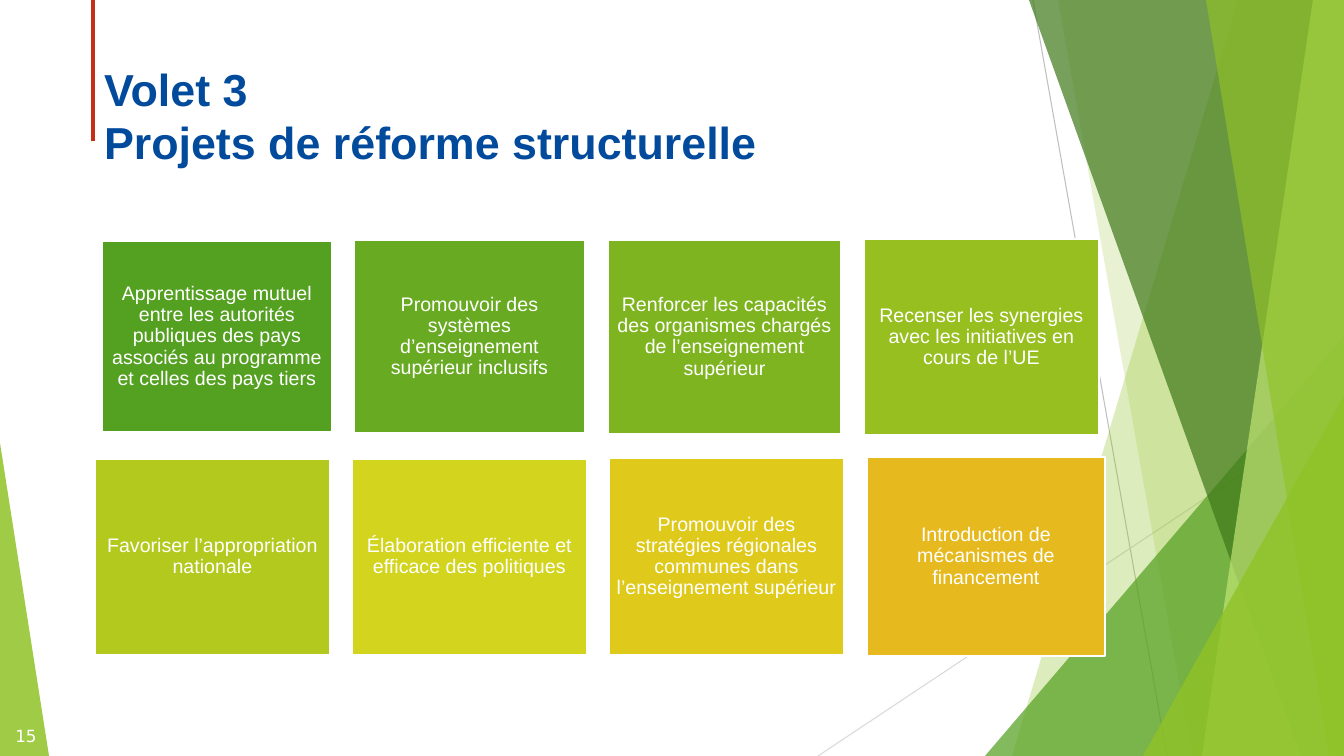
"""Build the slide on structural reform projects."""
from lxml.etree import SubElement
from pptx import Presentation
from pptx.dml.color import RGBColor
from pptx.enum.shapes import MSO_CONNECTOR, MSO_SHAPE
from pptx.enum.text import MSO_ANCHOR, MSO_AUTO_SIZE, PP_ALIGN
from pptx.oxml.ns import qn
from pptx.util import Pt

TITLE = ["Volet 3", "Projets de réforme structurelle"]
NUMBER = "15"
CARDS = [
    ("Apprentissage mutuel entre les autorités publiques des pays associés au programme "
     "et celles des pays tiers", "54A021", (102, 241, 230, 191)),
    ("Promouvoir des systèmes d’enseignement supérieur inclusifs", "68AA21", (354, 240, 231, 193)),
    ("Renforcer les capacités des organismes chargés de l’enseignement supérieur",
     "7EB420", (608, 240, 233, 194)),
    ("Recenser les synergies avec les initiatives en cours de l’UE", "97BF1F", (864, 239, 235, 196)),
    ("Favoriser l’appropriation nationale", "B3C91E", (95, 459, 235, 196)),
    ("Élaboration efficiente et efficace des politiques", "D2D41D", (352, 459, 235, 196)),
    ("Promouvoir des stratégies régionales communes dans l’enseignement supérieur",
     "DFCA1C", (609, 458, 235, 197)),
    ("Introduction de mécanismes de financement", "E6B91E", (867, 457, 238, 199)),
]
LINES = [((1033, 0, 1167, 756), "BFBFBF", 0.75), ((1344, 406, 818, 756), "D9D9D9", 0.75),
         ((93, 0, 93, 141), "C42F1A", 2.25)]
BANDS = [
    ("band", (1238, 1012), "90C226", 30),
    ("band", (1058, 1192), "90C226", 20),
    ("peak", (985, 336, 359, 420, 1), "54A021", 72),
    ("band", (1029, 1301), "3F7819", 70),
    ("band", (1313, 1202), "C0E474", 70),
    ("band", (1206, 1329), "90C226", 65),
    ("peak", (1143, 396, 201, 360, 1), "90C226", 80),
    ("peak", (0, 443, 49, 313, 0), "90C226", 85),
]
WIDE, HIGH = 1344, 756
SCALE = 914400 / 100.8


def px(*nums):
    return [round(n * SCALE) for n in nums]


def hue(code):
    return RGBColor.from_string(code)


def paint(shape, code, alpha=100):
    shape.shadow.inherit = False
    shape.fill.solid()
    shape.fill.fore_color.rgb = hue(code)
    shape.line.fill.background()
    if alpha < 100:
        tone = shape._element.spPr.find(qn("a:solidFill"))[0]
        SubElement(tone, qn("a:alpha")).set("val", str(alpha * 1000))


def write(shape, lines, size, code, font="Arial", bold=False, align=PP_ALIGN.CENTER,
          anchor=MSO_ANCHOR.MIDDLE, pad=(6, 6, 6, 6), gap=None):
    frame = shape.text_frame
    frame.word_wrap = True
    frame.auto_size = MSO_AUTO_SIZE.NONE
    frame.vertical_anchor = anchor
    (frame.margin_left, frame.margin_top,
     frame.margin_right, frame.margin_bottom) = px(*pad)
    for i, text in enumerate(lines):
        para = frame.add_paragraph() if i else frame.paragraphs[0]
        para.alignment = align
        para.space_before = Pt(0)
        if gap:
            para.line_spacing = gap
        run = para.add_run()
        run.text = text
        run.font.name, run.font.size, run.font.bold = font, Pt(size), bold
        run.font.color.rgb = hue(code)


def main():
    deck = Presentation()
    deck.slide_width, deck.slide_height = px(WIDE, HIGH)
    slide = deck.slides.add_slide(deck.slide_layouts[5])
    shapes = slide.shapes

    title = shapes.title
    title.left, title.top, title.width, title.height = px(94, 54, 962, 85)
    write(title, TITLE, 32, "024B9C", bold=True, align=PP_ALIGN.LEFT,
          anchor=MSO_ANCHOR.TOP, pad=(10, 8, 10, 5), gap=Pt(38))

    for ends, code, width in LINES:
        line = shapes.add_connector(MSO_CONNECTOR.STRAIGHT, *px(*ends))
        line.line.color.rgb = hue(code)
        line.line.width = Pt(width)
        SubElement(line._element.spPr, qn("a:effectLst"))

    for kind, place, code, alpha in BANDS:
        if kind == "band":
            top, foot = place
            path = shapes.build_freeform(top, 0, scale=SCALE)
            path.add_line_segments([(WIDE, 0), (WIDE, HIGH), (foot, HIGH)], close=True)
            shape = path.convert_to_shape()
        else:
            shape = shapes.add_shape(MSO_SHAPE.ISOSCELES_TRIANGLE, *px(*place[:4]))
            shape.adjustments[0] = place[4]
        paint(shape, code, alpha)

    for text, code, place in CARDS:
        card = shapes.add_shape(MSO_SHAPE.RECTANGLE, *px(*place))
        paint(card, code)
        card.line.color.rgb = hue("FFFFFF")
        card.line.width = Pt(1.5)
        write(card, [text], 14, "FFFFFF", gap=0.9)

    box = shapes.add_textbox(*px(0, 716, 52, 40))
    write(box, [NUMBER], 12, "FFFFFF", font="DejaVu Sans")
    deck.save("out.pptx")


if __name__ == "__main__":
    main()
